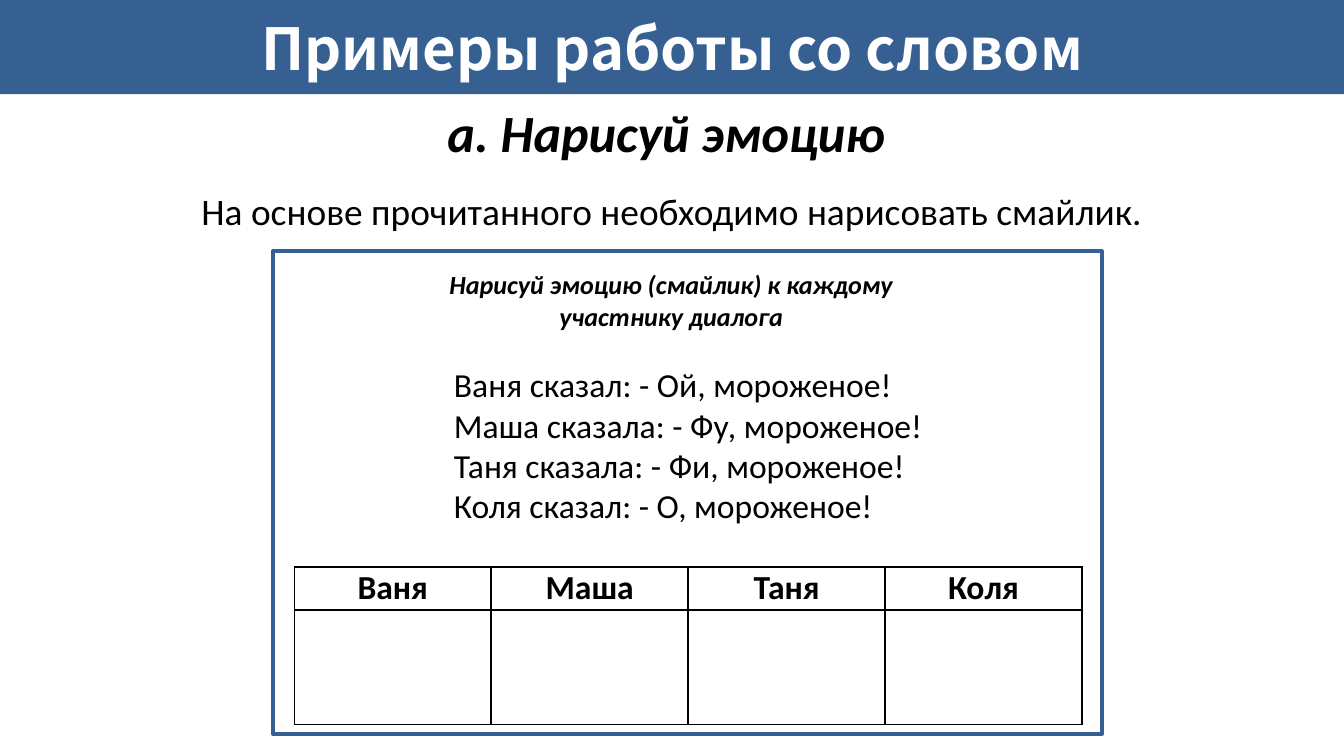
from dataclasses import dataclass

from lxml.etree import SubElement
from pptx import Presentation
from pptx.dml.color import RGBColor
from pptx.enum.shapes import MSO_SHAPE
from pptx.enum.text import MSO_ANCHOR, PP_ALIGN
from pptx.oxml.ns import qn
from pptx.util import Inches, Pt


@dataclass(frozen=True)
class Theme:
    """Colours, fonts and type sizes of the slide."""

    blue: RGBColor = RGBColor(0x37, 0x60, 0x92)
    white: RGBColor = RGBColor(0xFF, 0xFF, 0xFF)
    black: RGBColor = RGBColor(0, 0, 0)
    title_font: str = "Noto Sans CJK JP"
    body_font: str = "Calibri"
    title_size: int = 31
    heading_size: int = 28
    lead_size: int = 20
    text_size: int = 18
    task_size: int = 14
    lead_gap: float = 13.4


THEME = Theme()
NAMES = ["Ваня", "Маша", "Таня", "Коля"]
DIALOGUE = [
    "Ваня сказал: - Ой, мороженое!",
    "Маша сказала: - Фу, мороженое!",
    "Таня сказала: - Фи, мороженое!",
    "Коля сказал: - О, мороженое!",
]


def place(shape, left, top, width, height):
    """Move and size a shape, in inches."""
    shape.left, shape.top = Inches(left), Inches(top)
    shape.width, shape.height = Inches(width), Inches(height)


def format_para(para, size, bold=False, italic=False, align=PP_ALIGN.CENTER,
                color=THEME.black, font=THEME.body_font):
    """Align a paragraph and style its runs."""
    para.alignment = align
    for span in para.runs:
        span.font.name = font
        span.font.size = Pt(size)
        span.font.bold = bold
        span.font.italic = italic
        span.font.color.rgb = color


def add_title(page, text):
    """Turn the title placeholder into a full-width banner."""
    title = page.shapes.title
    place(title, 0, 0, 10, 0.7)
    title.fill.solid()
    title.fill.fore_color.rgb = THEME.blue
    frame = title.text_frame
    frame.text = text
    frame.vertical_anchor = MSO_ANCHOR.MIDDLE
    format_para(frame.paragraphs[0], THEME.title_size, bold=True,
                color=THEME.white, font=THEME.title_font)


def add_panel(page, left, top, width, height):
    """Draw the framed card."""
    panel = page.shapes.add_shape(
        MSO_SHAPE.RECTANGLE, Inches(left), Inches(top), Inches(width), Inches(height))
    panel.shadow.inherit = False
    panel.fill.solid()
    panel.fill.fore_color.rgb = THEME.white
    panel.line.color.rgb = THEME.blue
    panel.line.width = Pt(2)


def add_text(page, left, top, width, height, lines, wrap=True):
    """Add a text box with one paragraph per line and return its paragraphs."""
    box = page.shapes.add_textbox(
        Inches(left), Inches(top), Inches(width), Inches(height))
    frame = box.text_frame
    frame.word_wrap = wrap
    frame.text = "\n".join(lines)
    return frame.paragraphs


def add_borders(cell):
    """Draw a thin black line on every side of a cell."""
    properties = cell._tc.get_or_add_tcPr()
    for position, side in enumerate(("a:lnL", "a:lnR", "a:lnT", "a:lnB")):
        line = SubElement(properties, qn(side), w=str(Pt(1)))
        fill = SubElement(line, qn("a:solidFill"))
        SubElement(fill, qn("a:srgbClr"), val=str(THEME.black))
        properties.insert(position, line)


def add_answer_table(page, left, top, width, row_heights, names):
    """Add the table with a name over each empty answer cell."""
    table = page.shapes.add_table(
        len(row_heights), len(names), Inches(left), Inches(top),
        Inches(width), Inches(sum(row_heights))).table
    for row, height in zip(table.rows, row_heights):
        row.height = Inches(height)
    for cell, name in zip(table.rows[0].cells, names):
        cell.text = name
        format_para(cell.text_frame.paragraphs[0], THEME.text_size, bold=True)
    for cell in table.iter_cells():
        cell.margin_left = cell.margin_right = Inches(0.07)
        cell.margin_top = cell.margin_bottom = 0
        cell.fill.background()
        add_borders(cell)


def main():
    """Build the slide and save it."""
    deck = Presentation()
    deck.slide_width = Inches(10)
    deck.slide_height = Inches(10 * 9 / 16)
    page = deck.slides.add_slide(deck.slide_layouts.get_by_name("Title Only"))

    add_title(page, "Примеры работы со словом")
    add_panel(page, 2.03, 1.87, 6.17, 3.59)

    heading, lead = add_text(page, 0, 0.7, 10, 1.09, [
        "а. Нарисуй эмоцию ",
        "На основе прочитанного необходимо нарисовать смайлик."])
    format_para(heading, THEME.heading_size, bold=True, italic=True)
    format_para(lead, THEME.lead_size)
    lead.space_before = Pt(THEME.lead_gap)

    task, = add_text(page, 3.12, 1.95, 3.75, 0.57, [
        "Нарисуй эмоцию (смайлик) к каждому участнику диалога"])
    format_para(task, THEME.task_size, bold=True, italic=True)

    for para in add_text(page, 3.28, 2.66, 3.73, 1.31, DIALOGUE, wrap=False):
        format_para(para, THEME.text_size, align=PP_ALIGN.LEFT)

    add_answer_table(page, 2.19, 4.22, 5.86, [0.32, 0.85], NAMES)
    deck.save("out.pptx")


if __name__ == "__main__":
    main()
